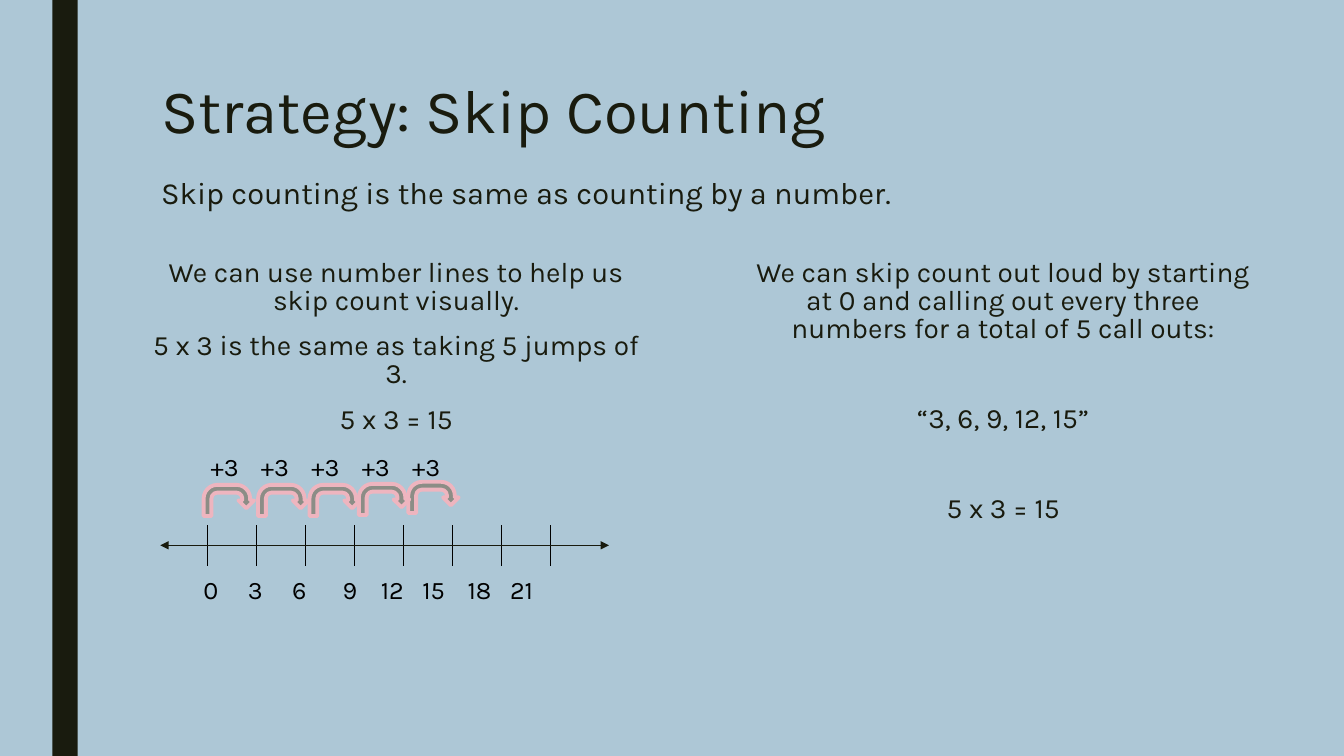
from dataclasses import dataclass
from lxml import etree
from pptx import Presentation
from pptx.dml.color import RGBColor as RGB
from pptx.enum.shapes import MSO_CONNECTOR as CONN, MSO_SHAPE as SHAPE
from pptx.enum.text import PP_ALIGN as ALIGN
from pptx.oxml import parse_xml
from pptx.oxml.ns import nsdecls, qn
from pptx.util import Inches, Pt


@dataclass(frozen=True)
class Theme:
    font: str = "Karla"
    background: RGB = RGB(0xAD, 0xC7, 0xD6)
    ink: RGB = RGB(0x19, 0x1B, 0x0E)
    black: RGB = RGB(0, 0, 0)
    arrow: RGB = RGB(0x8C, 0x8D, 0x86)
    glow: RGB = RGB(0xEE, 0xB5, 0xBF)
    title: int = 44
    subtitle: int = 22
    body: int = 20
    label: int = 18


theme = Theme()


def add_text(box, paragraphs, color, align=ALIGN.LEFT, spacing=1.0, after=0):
    tf = s.shapes.add_textbox(*map(Inches, box)).text_frame
    tf.word_wrap = True
    for i, (text, size, before) in enumerate(paragraphs):
        p = tf.paragraphs[0] if i == 0 else tf.add_paragraph()
        p.alignment, p.line_spacing = align, spacing
        p.space_before, p.space_after = Pt(before), Pt(after)
        r = p.add_run()
        r.text = text
        r.font.name, r.font.size, r.font.color.rgb = theme.font, Pt(size), color
    return tf


def add_labels(box, labels, stops):
    tf = add_text(box, [("\t".join(labels), theme.label, 0)], theme.black)
    pPr = tf.paragraphs[0]._p.get_or_add_pPr()
    tabs = etree.SubElement(pPr, qn("a:tabLst"))
    for stop in stops:
        etree.SubElement(tabs, qn("a:tab"), pos=str(Inches(stop)), algn="l")


prs = Presentation()
prs.slide_width, prs.slide_height = Inches(13.33), Inches(7.5)
s = prs.slides.add_slide(prs.slide_layouts[6])
s.background.fill.solid()
s.background.fill.fore_color.rgb = theme.background

bar = s.shapes.add_shape(SHAPE.RECTANGLE, Inches(0.52), 0, Inches(0.25), Inches(7.5))
bar.shadow.inherit = False
bar.fill.solid()
bar.fill.fore_color.rgb = theme.ink
bar.line.fill.background()

add_text((1.5, 0.75, 10.5, 1.62), [
    ("Strategy: Skip Counting", theme.title, 0),
    ("Skip counting is the same as counting by a number.", theme.subtitle, 23),
], theme.ink, spacing=0.89)

columns = [
    ((1.38, 2.53, 5.1, 1.66), 10, [
        "We can use number lines to help us skip count visually.",
        "5 x 3 is the same as taking 5 jumps of 3.",
        "5 x 3 = 15",
    ]),
    ((7.3, 2.53, 5.3, 3.98), 42, [
        "We can skip count out loud by starting at 0 and calling out "
        "every three numbers for a total of 5 call outs:",
        "“3, 6, 9, 12, 15”",
        "5 x 3 = 15",
    ]),
]
for box, gap, lines in columns:
    paragraphs = [(text, theme.body, gap if i else 0) for i, text in enumerate(lines)]
    add_text(box, paragraphs, theme.ink, ALIGN.CENTER, 0.84, 2)

COLS = 9
table = s.shapes.add_table(1, COLS, Inches(1.57), Inches(5.21), Inches(4.38), Inches(0.41)).table
table.first_row = table.horz_banding = False
tick = f'<a:solidFill><a:srgbClr val="{theme.black}"/></a:solidFill>'
for i, cell in enumerate(table.rows[0].cells):
    cell.margin_top = cell.margin_bottom = 0
    tcPr = cell._tc.get_or_add_tcPr()
    inner = {"lnL": i > 0, "lnR": i < COLS - 1, "lnT": False, "lnB": False}
    for side, shown in inner.items():
        paint = tick if shown else "<a:noFill/>"
        tcPr.append(parse_xml(f'<a:{side} {nsdecls("a")} w="12700">{paint}</a:{side}>'))
    cell.fill.background()

add_labels((1.92, 5.65, 4.03, 0.4), [str(n) for n in range(0, 22, 3)],
           [0.44, 0.88, 1.38, 1.76, 2.17, 2.62, 3.04])

axis = s.shapes.add_connector(CONN.STRAIGHT, Inches(1.59), Inches(5.41), Inches(6.04), Inches(5.41))
axis.line.color.rgb = theme.ink
axis.line.width = Pt(0.5)
ln = axis.line._get_or_add_ln()
for end in ("a:headEnd", "a:tailEnd"):
    etree.SubElement(ln, qn(end), type="triangle")
etree.SubElement(axis._element.spPr, qn("a:effectLst"))

add_labels((1.99, 4.43, 2.64, 0.4), ["+3"] * 5, [0.5 * n for n in range(1, 5)])

for left, top in [(2.02, 4.81), (2.56, 4.81), (3.07, 4.81), (4.05, 4.78), (3.56, 4.8)]:
    jump = s.shapes.add_shape(SHAPE.U_TURN_ARROW, Inches(left), Inches(top), Inches(0.5), Inches(0.31))
    jump.shadow.inherit = False
    jump.fill.solid()
    jump.fill.fore_color.rgb = theme.arrow
    jump.line.color.rgb = theme.glow
    jump.line.width = Pt(2.75)

prs.save("out.pptx")
